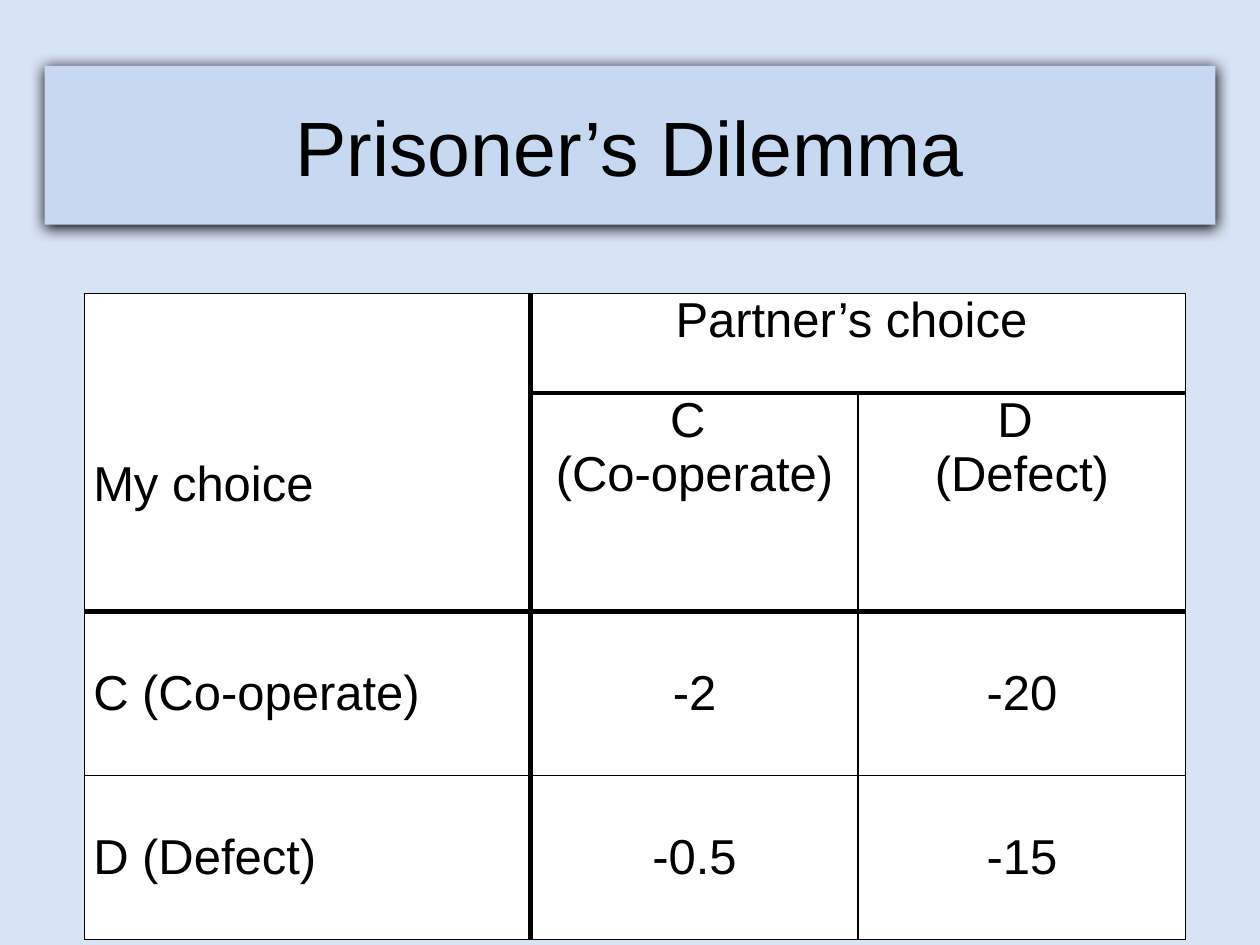
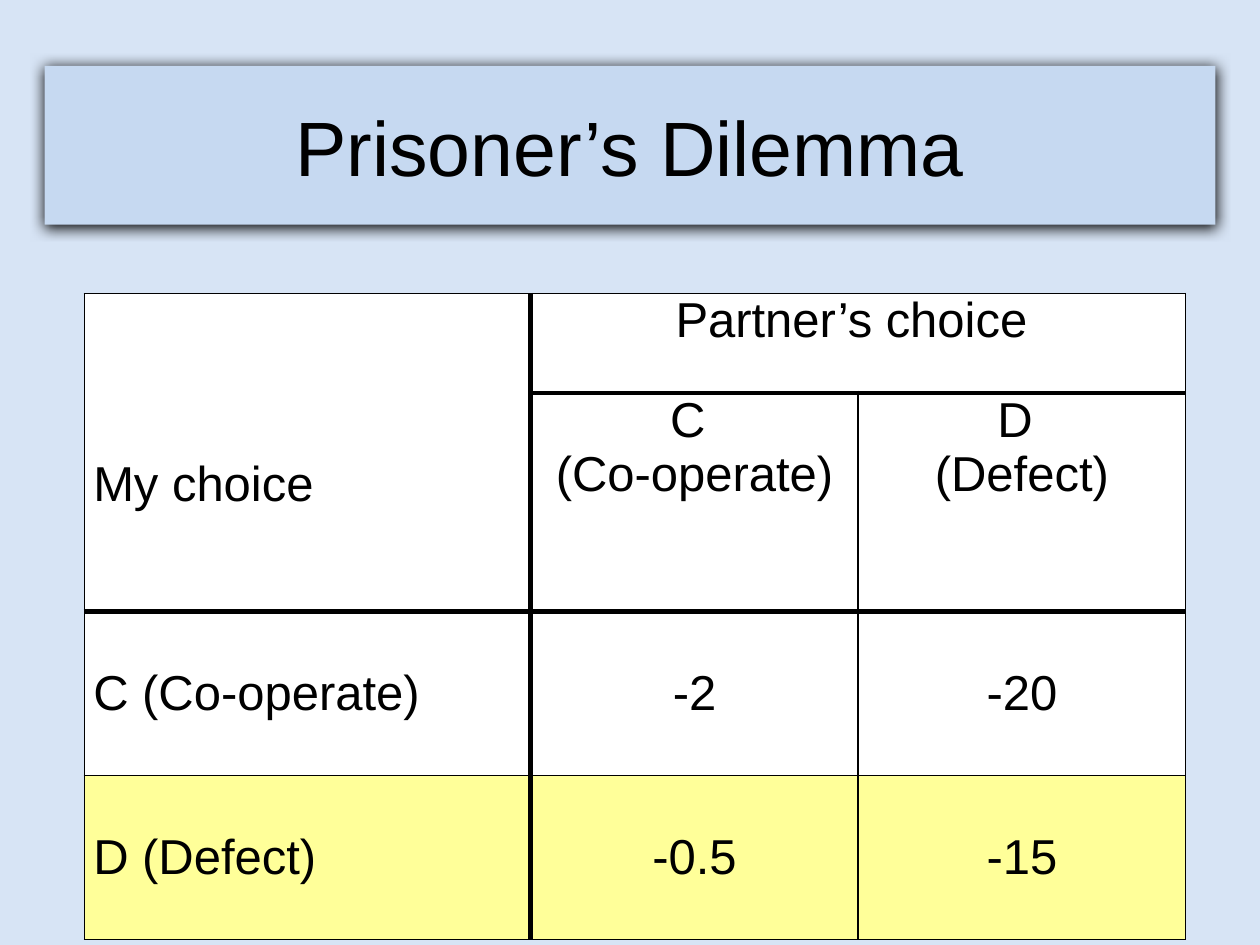
"""Build two payoff-table slides on the Prisoner's Dilemma."""
import dataclasses
from typing import Any

import pptx
import pptx.dml.color
import pptx.enum.shapes
import pptx.enum.text
import pptx.oxml
import pptx.oxml.ns
import pptx.util
from lxml import etree

Cm = pptx.util.Cm
Pt = pptx.util.Pt
RGBColor = pptx.dml.color.RGBColor
ALIGN = pptx.enum.text.PP_ALIGN
ANCHOR = pptx.enum.text.MSO_ANCHOR

BLACK = RGBColor(0x00, 0x00, 0x00)
WHITE = RGBColor(0xFF, 0xFF, 0xFF)
BAND = RGBColor(0xC6, 0xD9, 0xF1)
BACKGROUND = RGBColor(0xD7, 0xE4, 0xF5)
HIGHLIGHT = RGBColor(0xFF, 0xFF, 0x99)

TITLE = "Prisoner’s Dilemma"
FONT = "Arial"
COLUMN_WIDTHS = (Cm(9), Cm(6.6), Cm(6.6))
ROW_HEIGHTS = (Cm(2), Cm(4.39), Cm(3.31), Cm(3.31))
HEAVY_COLUMN_LINES = (1,)
HEAVY_ROW_LINES = (1, 2)
DEFECT_ROW = 3

CELL_FORMAT = {
    "margin_left": Cm(0.18),
    "margin_right": Cm(0.18),
    "margin_top": Cm(0),
    "margin_bottom": Cm(0),
}


@dataclasses.dataclass(frozen=True)
class Entry:
    """Text of one table cell with its place, span and format."""

    row: int
    col: int
    text: str
    align: Any = ALIGN.CENTER
    rows: int = 1
    cols: int = 1
    format: dict = dataclasses.field(default_factory=dict)


MIDDLE = {"vertical_anchor": ANCHOR.MIDDLE}
PAYOFFS = (
    ("C (Co-operate)", "-2", "-20"),
    ("D (Defect)", "-0.5", "-15"),
)
ENTRIES = [
    Entry(0, 0, "My choice", ALIGN.LEFT, rows=2, format={"margin_top": Cm(3.3)}),
    Entry(0, 1, "Partner’s choice ", cols=2),
    Entry(1, 1, "C \n(Co-operate)"),
    Entry(1, 2, "D \n(Defect)"),
] + [
    Entry(row, col, text, ALIGN.CENTER if col else ALIGN.LEFT, format=MIDDLE)
    for row, texts in enumerate(PAYOFFS, start=2)
    for col, text in enumerate(texts)
]


def apply(target: Any, values: dict) -> None:
    """Set each named attribute on the target."""
    for name, value in values.items():
        setattr(target, name, value)


def write(tf: Any, text: str, size: int, align: Any) -> None:
    """Write one paragraph per line of text."""
    tf.word_wrap = True
    tf.text = text
    for p in tf.paragraphs:
        p.alignment = align
        for r in p.runs:
            apply(r.font, {"name": FONT, "size": Pt(size), "bold": False})
            r.font.color.rgb = BLACK


def add_title(s: Any) -> None:
    """Add the shaded title band."""
    sp = s.shapes.add_shape(
        pptx.enum.shapes.MSO_SHAPE.RECTANGLE, Cm(0.9), Cm(1.33), Cm(23.6), Cm(3.2)
    )
    sp.fill.solid()
    sp.fill.fore_color.rgb = BAND
    sp.line.fill.background()
    sp.shadow.inherit = False
    effects = sp.element.spPr.find(pptx.oxml.ns.qn("a:effectLst"))
    effects.append(pptx.oxml.parse_xml(
        f'<a:outerShdw {pptx.oxml.ns.nsdecls("a")} blurRad="{Pt(8.5)}" '
        f'dist="{Pt(1)}" dir="5400000" algn="ctr" rotWithShape="0">'
        f'<a:srgbClr val="{BLACK}"/></a:outerShdw>'
    ))
    sp.text_frame.vertical_anchor = ANCHOR.MIDDLE
    write(sp.text_frame, TITLE, 44, ALIGN.CENTER)


def add_borders(cell: Any, entry: Entry) -> None:
    """Draw the four cell edges, heavy along the heading lines."""
    right, bottom = entry.col + entry.cols, entry.row + entry.rows
    edges = {
        "lnL": entry.col in HEAVY_COLUMN_LINES,
        "lnR": right in HEAVY_COLUMN_LINES,
        "lnT": entry.row in HEAVY_ROW_LINES,
        "lnB": bottom in HEAVY_ROW_LINES,
    }
    qn = pptx.oxml.ns.qn
    properties = cell._tc.get_or_add_tcPr()
    for tag, heavy in edges.items():
        line = etree.SubElement(properties, qn(f"a:{tag}"), w=str(Pt(3 if heavy else 1)))
        fill = etree.SubElement(line, qn("a:solidFill"))
        etree.SubElement(fill, qn("a:srgbClr"), val=str(BLACK))


def add_payoffs(s: Any, highlighted_row: int | None) -> None:
    """Add the payoff table, colouring one row if asked."""
    frame = s.shapes.add_table(
        len(ROW_HEIGHTS), len(COLUMN_WIDTHS), Cm(1.7), Cm(5.92),
        sum(COLUMN_WIDTHS), sum(ROW_HEIGHTS),
    )
    table = frame.table
    apply(table, {"first_row": False, "horz_banding": False})
    for column, width in zip(table.columns, COLUMN_WIDTHS):
        column.width = width
    for row, height in zip(table.rows, ROW_HEIGHTS):
        row.height = height
    for entry in ENTRIES:
        cell = table.cell(entry.row, entry.col)
        if entry.rows * entry.cols > 1:
            cell.merge(table.cell(entry.row + entry.rows - 1, entry.col + entry.cols - 1))
        apply(cell, CELL_FORMAT | entry.format)
        add_borders(cell, entry)
        cell.fill.solid()
        cell.fill.fore_color.rgb = HIGHLIGHT if entry.row == highlighted_row else WHITE
        write(cell.text_frame, entry.text, 28, entry.align)


def main() -> None:
    """Build and save the slides."""
    prs = pptx.Presentation()
    apply(prs, {"slide_width": Cm(25.4), "slide_height": Cm(19.05)})
    for highlighted_row in (None, DEFECT_ROW):
        s = prs.slides.add_slide(prs.slide_layouts[6])
        s.background.fill.solid()
        s.background.fill.fore_color.rgb = BACKGROUND
        add_title(s)
        add_payoffs(s, highlighted_row)
    prs.save("out.pptx")


if __name__ == "__main__":
    main()
